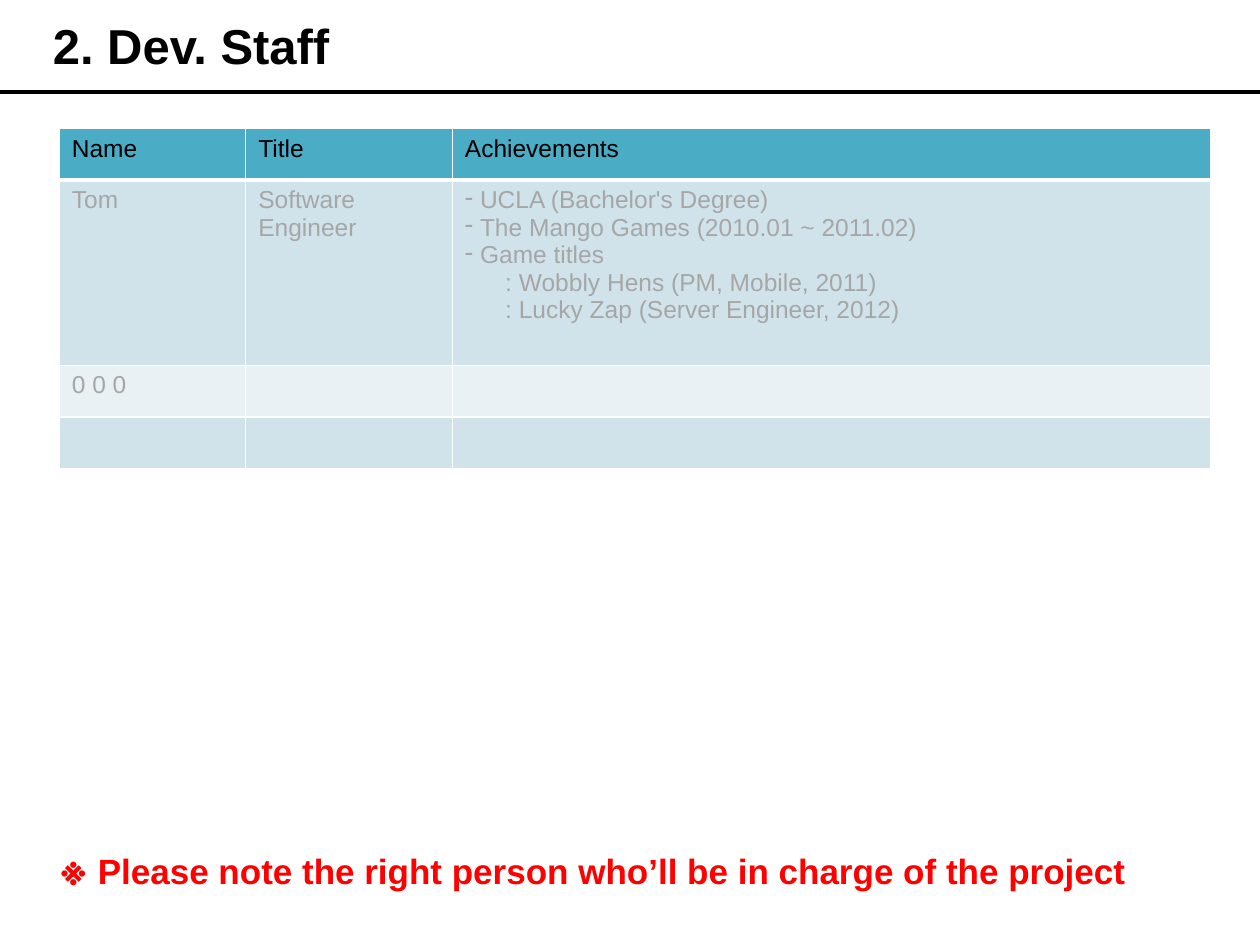
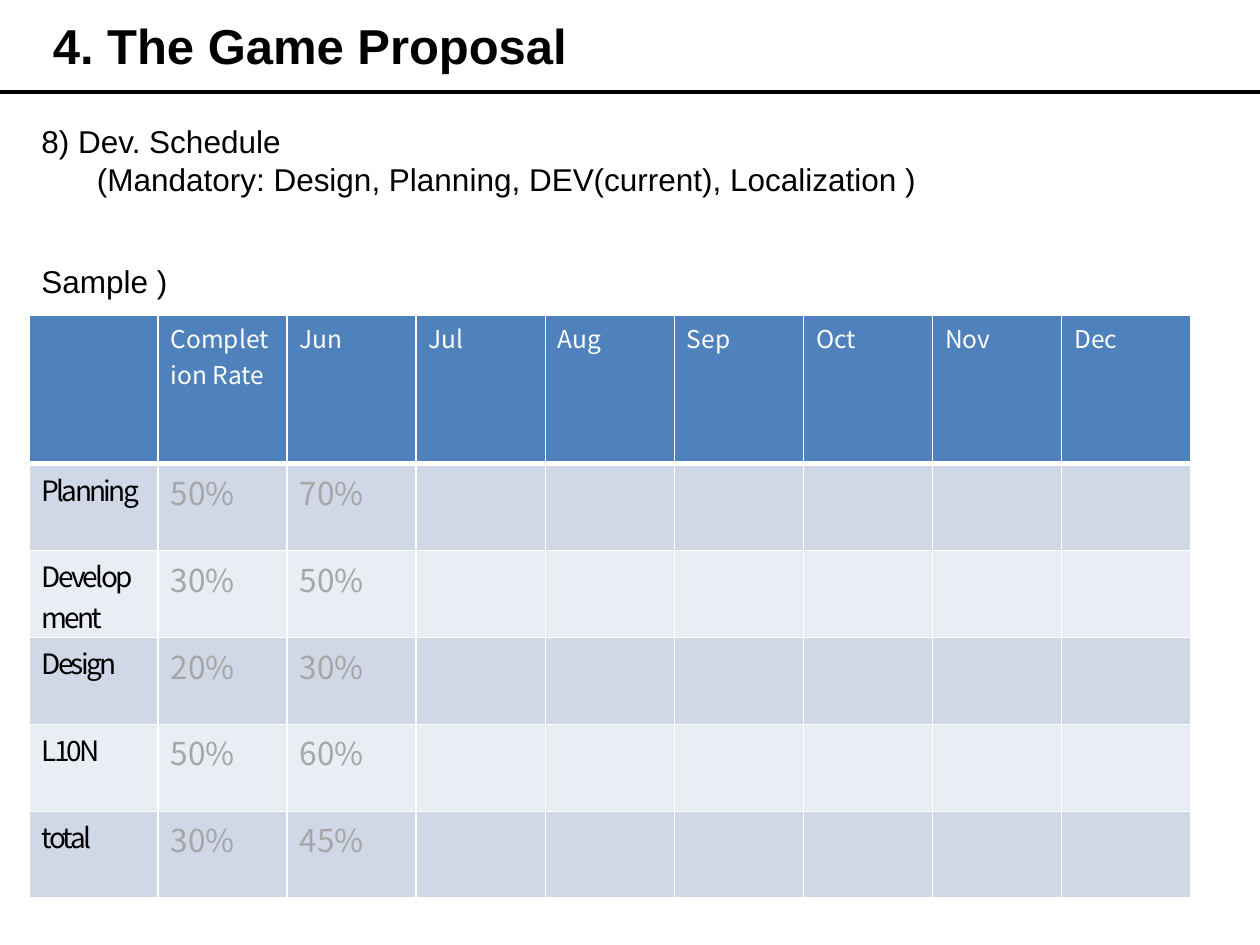
from lxml.etree import SubElement
from pptx import Presentation
from pptx.dml.color import RGBColor
from pptx.enum.shapes import MSO_CONNECTOR
from pptx.enum.text import MSO_ANCHOR
from pptx.oxml.ns import qn
from pptx.util import Inches, Pt

COLORS = {
    "black": "000000", "white": "FFFFFF", "red": "FF0000", "sample": "A6A6A6",
    "teal": "4BACC6", "teal_dark": "D0E3EA", "teal_light": "E9F1F5",
    "blue": "4F81BD", "blue_dark": "D0D8E8", "blue_light": "E9EDF4",
}
SANS, KOREAN = "Arial", "Noto Sans CJK KR"

# A cell is a list of (text, left indent, bullet) lines.
STAFF_HEADER = ["Name", "Title", "Achievements"]
STAFF = [
    ["Tom", "Software\nEngineer", [
        ("UCLA (Bachelor's Degree)", 0.12, "-"),
        ("The Mango Games (2010.01 ~ 2011.02)", 0.12, "-"),
        ("Game titles", 0.12, "-"),
        (": Wobbly Hens (PM, Mobile, 2011)", 0.32, None),
        (": Lucky Zap (Server Engineer, 2012)", 0.32, None),
    ]],
    ["0 0 0", "", ""],
    ["", "", ""],
]
STAFF_WIDTHS = [1.48, 1.64, 6.02]
STAFF_HEIGHTS = [0.41, 1.47, 0.41, 0.41]
STAFF_NOTE = "Please note the right person who’ll be in charge of the project"

MONTHS = ["Jun", "Jul", "Aug", "Sep", "Oct", "Nov", "Dec"]
SCHEDULE = [
    ("Planning", "50%", "70%"),
    ("Development", "30%", "50%"),
    ("Design", "20%", "30%"),
    ("L10N", "50%", "60%"),
    ("total", "30%", "45%"),
]
SCHEDULE_WIDTH = 9.22
SCHEDULE_HEIGHTS = [1.18] + [0.69] * len(SCHEDULE)


def color(name):
    return RGBColor.from_string(COLORS[name])


def add_span(para, text, size, ink, font=SANS, bold=False, spacing=0):
    span = para.add_run()
    span.text = text
    span.font.size, span.font.name, span.font.bold = Pt(size), font, bold
    span.font.color.rgb = color(ink)
    if spacing:
        span._r.get_or_add_rPr().set("spc", str(int(spacing * 100)))


def indent(para, left, first=0, bullet=None):
    properties = para._p.get_or_add_pPr()
    properties.set("marL", str(Inches(left)))
    properties.set("indent", str(Inches(first)))
    if bullet:
        SubElement(properties, qn("a:buChar")).set("char", bullet)


def add_box(page, left, top, width, height):
    frame = page.shapes.add_textbox(
        Inches(left), Inches(top), Inches(width), Inches(height)).text_frame
    frame.word_wrap = True
    return frame


def add_page(deck, title):
    """Add a blank page with the shared title and the rule beneath it."""
    page = deck.slides.add_slide(deck.slide_layouts[6])
    rule = page.shapes.add_connector(
        MSO_CONNECTOR.STRAIGHT, 0, Inches(0.73), deck.slide_width, Inches(0.73))
    rule.line.color.rgb = color("black")
    rule.line.width = Pt(2.25)
    SubElement(rule._element.spPr, qn("a:effectLst"))
    frame = add_box(page, 0, 0.16, 9, 0.4)
    frame.margin_left = Inches(0.42)
    frame.vertical_anchor = MSO_ANCHOR.MIDDLE
    add_span(frame.paragraphs[0], title, 28, "black", bold=True)
    return page


def set_borders(cell, bottom):
    properties = cell._tc.get_or_add_tcPr()
    for side, width in (("L", 1), ("R", 1), ("T", 1), ("B", bottom)):
        line = SubElement(properties, qn(f"a:ln{side}"), w=str(Pt(width)))
        fill = SubElement(line, qn("a:solidFill"))
        SubElement(fill, qn("a:srgbClr"), val=COLORS["white"])


def fill_cell(cell, content, style):
    lines = [(content, 0, None)] if isinstance(content, str) else content
    for number, (text, left, bullet) in enumerate(lines):
        frame = cell.text_frame
        para = frame.add_paragraph() if number else frame.paragraphs[0]
        if left:
            indent(para, left, -left if bullet else 0, bullet)
        for part_number, part in enumerate(text.split("\n") if text else []):
            if part_number:
                para.add_line_break()
            add_span(para, part, **style)


def add_grid(page, left, top, widths, heights, rows, theme, style_for):
    """Add a table with a header and banded rows in the theme's tints."""
    table = page.shapes.add_table(
        len(rows), len(widths), Inches(left), Inches(top),
        Inches(sum(widths)), Inches(sum(heights))).table
    table.first_row = table.horz_banding = False
    for column, width in zip(table.columns, widths):
        column.width = Inches(width)
    for row_number, (row, height, contents) in enumerate(zip(table.rows, heights, rows)):
        row.height = Inches(height)
        tint = theme + ("_dark" if row_number % 2 else "_light") if row_number else theme
        for column_number, (cell, content) in enumerate(zip(row.cells, contents)):
            set_borders(cell, bottom=1 if row_number else 3)
            cell.fill.solid()
            cell.fill.fore_color.rgb = color(tint)
            fill_cell(cell, content, style_for(row_number, column_number))
    return table


def staff_style(row, column):
    return {"size": 14, "ink": "sample" if row else "black"}


def schedule_style(row, column):
    if row == 0:
        return {"size": 14, "ink": "white", "font": KOREAN}
    if column == 0:
        return {"size": 16, "ink": "black", "font": KOREAN, "spacing": -1.5}
    return {"size": 18, "ink": "sample", "font": KOREAN}


def add_staff_page(deck):
    page = add_page(deck, "2. Dev. Staff")
    add_grid(page, 0.47, 1.02, STAFF_WIDTHS, STAFF_HEIGHTS,
             [STAFF_HEADER] + STAFF, "teal", staff_style)
    para = add_box(page, 0.39, 6.64, 9.3, 0.5).paragraphs[0]
    indent(para, 0.44, -0.44)
    add_span(para, "※ ", 24, "red", bold=True)
    add_span(para, STAFF_NOTE, 20, "red", bold=True)


def add_schedule_page(deck):
    page = add_page(deck, "4. The Game Proposal")
    heading = add_box(page, 0.23, 0.92, SCHEDULE_WIDTH, 0.71)
    para = heading.paragraphs[0]
    indent(para, 0.44, -0.44)
    add_span(para, "8) Dev. Schedule", 18, "black")
    para = heading.add_paragraph()
    indent(para, 0.44)
    add_span(para, "(Mandatory: Design, Planning, DEV(current), Localization )", 18, "black")

    header = ["", "Completion Rate"] + MONTHS
    rows = [header] + [list(row) + [""] * (len(header) - len(row)) for row in SCHEDULE]
    table = add_grid(page, 0.23, 2.5, [SCHEDULE_WIDTH / len(header)] * len(header),
                     SCHEDULE_HEIGHTS, rows, "blue", schedule_style)
    for cell in table.iter_cells():
        cell.margin_top, cell.margin_bottom = Inches(0.04), 0

    sample = add_box(page, 0.23, 2.03, 2.34, 0.4)
    add_span(sample.paragraphs[0], "Sample )", 18, "black")


def main():
    deck = Presentation()
    deck.slide_width, deck.slide_height = Inches(10), Inches(7.5)
    add_staff_page(deck)
    add_schedule_page(deck)
    deck.save("out.pptx")


if __name__ == "__main__":
    main()
